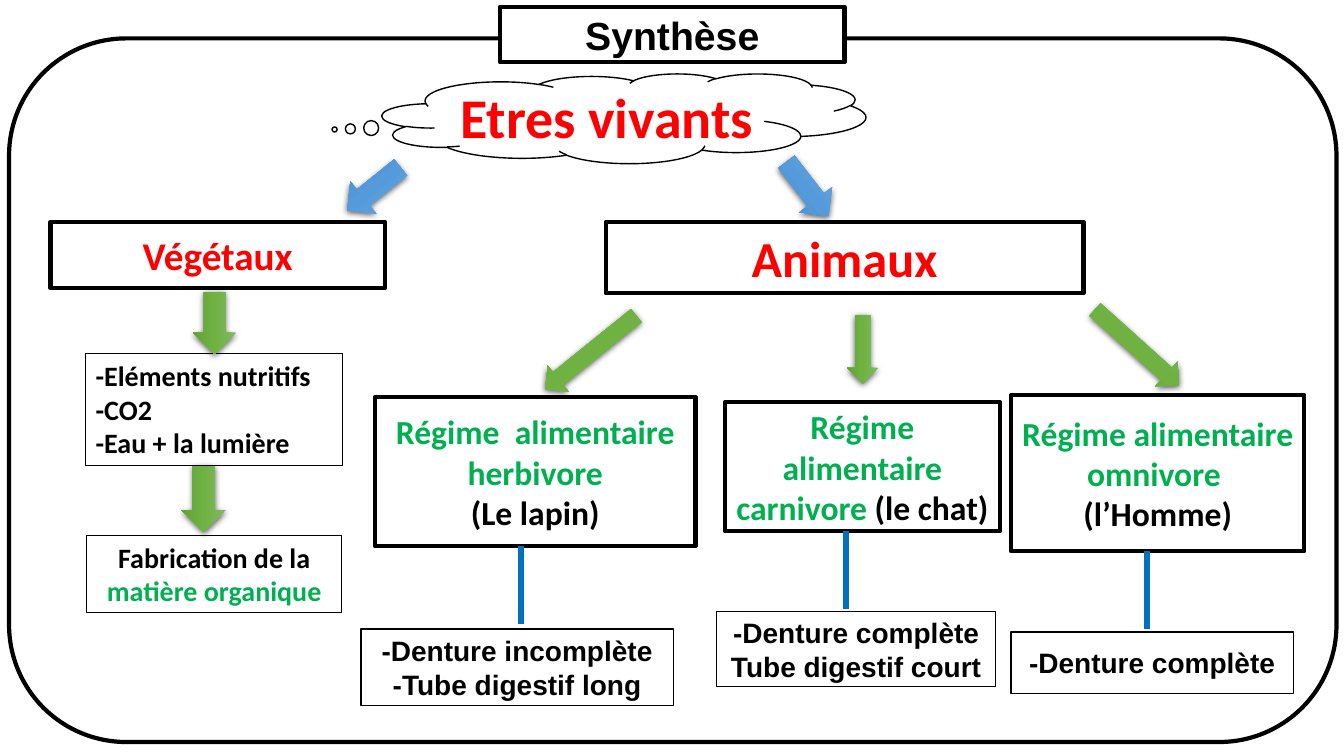
from dataclasses import dataclass
from lxml import etree
from pptx import Presentation
from pptx.dml.color import RGBColor
from pptx.enum.shapes import MSO_CONNECTOR as CONN, MSO_SHAPE as SHAPE
from pptx.enum.text import MSO_ANCHOR as ANCHOR, MSO_AUTO_SIZE as FIT, PP_ALIGN as ALIGN
from pptx.oxml import parse_xml
from pptx.oxml.ns import nsdecls, qn
from pptx.util import Pt


@dataclass(frozen=True)
class Theme:
    black: str = "000000"
    white: str = "FFFFFF"
    red: str = "FF0000"
    green: str = "00B050"
    link: str = "0070C0"
    green_arrow: tuple = ("81B861", "6FB242", "62A336")
    blue_arrow: tuple = ("71A6DB", "559BDB", "448ACA")
    body: str = "Calibri"
    plain: str = "Arial"
    topic: int = 40
    animals: int = 36
    heading: int = 28
    diet: int = 24
    detail: int = 20
    thick: float = 3
    thin: float = 1
    hairline: float = 0.75
    link_width: float = 4.5


T = Theme()
SLIDE = (960, 540)
TITLE = ("Synthèse", (357.1, 5, 246.2, 39.6))
FRAME = (6.5, 27.4, 948.2, 502.6)
CLOUD = ((272.9, 52.6, 345.6, 64.1), [[("Etres vivants", T.red)]])
CLOUD_TAIL = (-0.598, 0.122)

GROUPS = [
    ((36, 158.4, 239, 47.5), T.heading, [[("Végétaux", T.red)]]),
    ((432.7, 158.4, 341.3, 51.1), T.animals, [[("Animaux", T.red)]]),
]
DIETS = [
    ((267.8, 283.7, 229, 106.6),
     [[("Régime  alimentaire herbivore", T.green)], [("(Le lapin)", T.black)]]),
    ((517.7, 287.3, 196.6, 92.2),
     [[("Régime alimentaire carnivore ", T.green), ("(le chat)", T.black)]]),
    ((722.2, 282.2, 209.5, 111.6),
     [[("Régime alimentaire omnivore  ", T.green), ("(l’Homme)", T.black)]]),
]
TEETH = [
    ((257.8, 449.3, 223.2, 54.7), ["-Denture incomplète", "-Tube digestif long"]),
    ((511.9, 437, 199.4, 53.3), ["-Denture complète", "Tube digestif court"]),
    ((722.2, 451.4, 201.6, 43.9), ["-Denture complète"]),
]
PLANTS = [
    ((61.2, 252.7, 183.6, 79.9), ALIGN.LEFT,
     [[(t, T.black)] for t in ("-Eléments nutritifs", "-CO2", "-Eau + la lumière")]),
    ((61.9, 382.3, 182.2, 55.4), ALIGN.CENTER,
     [[("Fabrication de la ", T.black), ("matière organique", T.green)]]),
]
ARROWS = [
    ((242.6, 120.2, 49, 29.5), 141.1, T.blue_arrow),
    ((552.2, 120.2, 49, 29.5), 52.3, T.blue_arrow),
    ((380.2, 239.8, 83.5, 23.8), 141.1, T.green_arrow),
    ((591.8, 238.3, 49, 22.3), 90, T.green_arrow),
    ((771.8, 236.2, 80.6, 23.8), 42, T.green_arrow),
    ((131, 215.3, 44.6, 31), 90, T.green_arrow),
    ((121.7, 340.6, 47.5, 31.7), 90, T.green_arrow),
]
LINK_X = (372.2, 604.1, 819.4)
LINK_LENGTH = 55.4


def rgb(value):
    return RGBColor.from_string(value)


def outline(s, width, color=T.black):
    s.line.color.rgb = rgb(color)
    s.line.width = Pt(width)


def write(s, paragraphs, size, font, align=ALIGN.CENTER, anchor=ANCHOR.MIDDLE):
    tf = s.text_frame
    tf.word_wrap = True
    tf.vertical_anchor = anchor
    for i, runs in enumerate(paragraphs):
        p = tf.add_paragraph() if i else tf.paragraphs[0]
        p.alignment = align
        for text, color in runs:
            r = p.add_run()
            r.text = text
            r.font.name, r.font.size, r.font.bold = font, Pt(size), True
            r.font.color.rgb = rgb(color)


def add_outlined(shapes, kind, box, width):
    s = shapes.add_shape(kind, *map(Pt, box))
    s.shadow.inherit = False
    s.fill.background()
    outline(s, width)
    return s


def add_box(shapes, box, paragraphs, size, width, font=T.body):
    s = add_outlined(shapes, SHAPE.RECTANGLE, box, width)
    write(s, paragraphs, size, font)


def add_note(shapes, box, align, paragraphs):
    s = shapes.add_textbox(*map(Pt, box))
    outline(s, T.hairline)
    write(s, paragraphs, T.detail, T.body, align, ANCHOR.TOP)
    s.text_frame.auto_size = FIT.SHAPE_TO_FIT_TEXT


def add_arrow(shapes, box, angle, colors):
    s = shapes.add_shape(SHAPE.RIGHT_ARROW, *map(Pt, box))
    s.rotation = angle
    stops = "".join(f'<a:gs pos="{i * 50000}"><a:srgbClr val="{c}"/></a:gs>'
                    for i, c in enumerate(colors))
    sp_pr = s._element.spPr
    sp_pr.append(parse_xml(
        f'<a:gradFill {nsdecls("a")} rotWithShape="1"><a:gsLst>{stops}</a:gsLst>'
        '<a:lin ang="5400000" scaled="0"/></a:gradFill>'))
    s.line.fill.background()
    sp_pr.append(parse_xml(
        f'<a:effectLst {nsdecls("a")}><a:outerShdw blurRad="{Pt(4.5)}" dist="{Pt(1.5)}" '
        'dir="5400000" algn="ctr" rotWithShape="0"><a:srgbClr val="000000">'
        '<a:alpha val="63000"/></a:srgbClr></a:outerShdw></a:effectLst>'))


def add_link(shapes, x, top):
    s = shapes.add_connector(CONN.STRAIGHT, Pt(x), Pt(top), Pt(x), Pt(top + LINK_LENGTH))
    outline(s, T.link_width, T.link)
    etree.SubElement(s._element.spPr, qn("a:effectLst"))


def place_title(shapes, text, box):
    s = shapes.title
    s.left, s.top, s.width, s.height = map(Pt, box)
    s._element.spPr.append(parse_xml(
        f'<a:prstGeom {nsdecls("a")} prst="roundRect"><a:avLst/></a:prstGeom>'))
    s.fill.solid()
    s.fill.fore_color.rgb = rgb(T.white)
    outline(s, T.thick)
    write(s, [[(text, T.black)]], T.heading, T.plain)
    s.text_frame.auto_size = FIT.NONE
    shapes._spTree.append(s._element)


def main():
    prs = Presentation()
    prs.slide_width, prs.slide_height = map(Pt, SLIDE)
    shapes = prs.slides.add_slide(prs.slide_layouts[5]).shapes

    box, paragraphs = CLOUD
    cloud = add_outlined(shapes, SHAPE.CLOUD_CALLOUT, box, T.thin)
    for i, value in enumerate(CLOUD_TAIL):
        cloud.adjustments[i] = value
    write(cloud, paragraphs, T.topic, T.body)

    for box, size, paragraphs in GROUPS:
        add_box(shapes, box, paragraphs, size, T.thick)
    for (box, paragraphs), x in zip(DIETS, LINK_X):
        add_box(shapes, box, paragraphs, T.diet, T.thick)
        add_link(shapes, x, box[1] + box[3])
    for box, lines in TEETH:
        add_box(shapes, box, [[(t, T.black)] for t in lines], T.detail, T.thin, T.plain)
    add_outlined(shapes, SHAPE.ROUNDED_RECTANGLE, FRAME, T.thick)
    place_title(shapes, *TITLE)
    for note in PLANTS:
        add_note(shapes, *note)
    for arrow in ARROWS:
        add_arrow(shapes, *arrow)
    prs.save("out.pptx")


if __name__ == "__main__":
    main()
